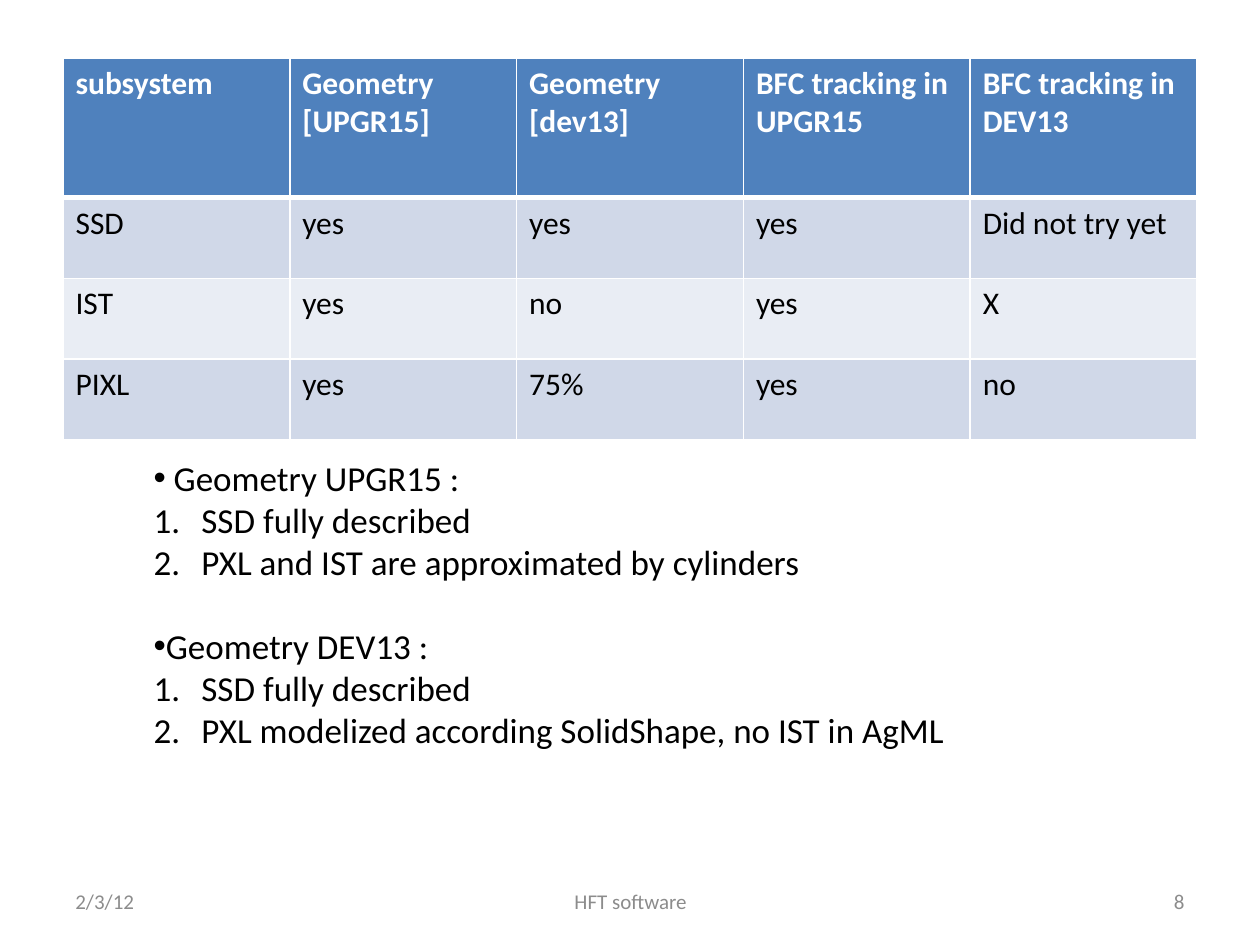
from lxml import etree
from pptx import Presentation
from pptx.dml.color import RGBColor as RGB
from pptx.enum.text import MSO_ANCHOR as ANCHOR, MSO_AUTO_SIZE as AUTO, PP_ALIGN as ALIGN
from pptx.oxml.ns import qn
from pptx.util import Inches, Pt

THEME = {
    "font": "Calibri",
    "head_fill": RGB(0x4F, 0x81, 0xBD),
    "bands": [RGB(0xD0, 0xD8, 0xE8), RGB(0xE9, 0xED, 0xF4)],
    "border": "FFFFFF",
    "head": {"size": Pt(18), "color": RGB(255, 255, 255), "bold": True},
    "cell": {"size": Pt(18), "color": RGB(0, 0, 0), "bold": False},
    "body": {"size": Pt(20), "color": RGB(0, 0, 0)},
    "footer": {"size": Pt(12), "color": RGB(0x8C, 0x8C, 0x8C)},
}


def add_text(p, text, style):
    r = p.add_run()
    r.text = text
    r.font.name = THEME["font"]
    for name, value in THEME[style].items():
        if name == "color":
            r.font.color.rgb = value
        else:
            setattr(r.font, name, value)


def add_border(cell, side, width):
    ln = etree.SubElement(cell._tc.get_or_add_tcPr(), qn(f"a:ln{side}"), w=str(Pt(width)))
    fill = etree.SubElement(ln, qn("a:solidFill"))
    etree.SubElement(fill, qn("a:srgbClr"), val=THEME["border"])


prs = Presentation()
prs.slide_width, prs.slide_height = Inches(10), Inches(7.5)
s = prs.slides.add_slide(prs.slide_layouts[6])

footers = [
    ("2/3/12", 0.5, 2.33, ALIGN.LEFT),
    ("HFT software", 3.42, 3.17, ALIGN.CENTER),
    ("8", 7.17, 2.33, ALIGN.RIGHT),
]
for text, left, width, align in footers:
    sp = s.shapes.add_textbox(Inches(left), Inches(6.95), Inches(width), Inches(0.4))
    tf = sp.text_frame
    tf.word_wrap = True
    tf.vertical_anchor = ANCHOR.MIDDLE
    p = tf.paragraphs[0]
    p.alignment = align
    add_text(p, text, "footer")

rows = [
    ["subsystem", "Geometry [UPGR15]", "Geometry [dev13]",
     "BFC tracking in UPGR15", "BFC tracking in DEV13"],
    ["SSD", "yes", "yes", "yes", "Did not try yet"],
    ["IST", "yes", "no", "yes", "X"],
    ["PIXL", "yes", "75%", "yes", "no"],
]
heights = [1.11, 0.64, 0.64, 0.64]
table = s.shapes.add_table(len(rows), len(rows[0]), Inches(0.5), Inches(0.46),
                           Inches(9), Inches(sum(heights))).table
for i, row in enumerate(rows):
    table.rows[i].height = Inches(heights[i])
    for j, text in enumerate(row):
        cell = table.cell(i, j)
        for side in "LRTB":
            at_head_edge = (i, side) in [(0, "B"), (1, "T")]
            add_border(cell, side, 3 if at_head_edge else 1)
        cell.fill.solid()
        cell.fill.fore_color.rgb = THEME["bands"][(i - 1) % 2] if i else THEME["head_fill"]
        add_text(cell.text_frame.paragraphs[0], text, "cell" if i else "head")

geometries = [
    (" Geometry UPGR15 :", ["SSD fully described", "PXL and IST are approximated by cylinders"]),
    ("Geometry DEV13 :", ["SSD fully described",
                          "PXL modelized according SolidShape, no IST in AgML"]),
]
sp = s.shapes.add_textbox(Inches(1.12), Inches(3.57), Inches(7.41), Inches(2.46))
tf = sp.text_frame
tf.word_wrap = True
tf.auto_size = AUTO.SHAPE_TO_FIT_TEXT
for i, (title, points) in enumerate(geometries):
    p = tf.add_paragraph() if i else tf.paragraphs[0]
    p.space_before = Pt(24 * i)
    add_text(p, title, "body")
    pPr = p._p.get_or_add_pPr()
    etree.SubElement(pPr, qn("a:buFont"), typeface="Arial")
    etree.SubElement(pPr, qn("a:buChar"), char="•")
    for point in points:
        p = tf.add_paragraph()
        add_text(p, point, "body")
        pPr = p._p.get_or_add_pPr()
        pPr.set("marL", str(Inches(0.38)))
        pPr.set("indent", str(-Inches(0.38)))
        etree.SubElement(pPr, qn("a:buFont"), typeface="+mj-lt")
        etree.SubElement(pPr, qn("a:buAutoNum"), type="arabicPeriod")

prs.save("out.pptx")
